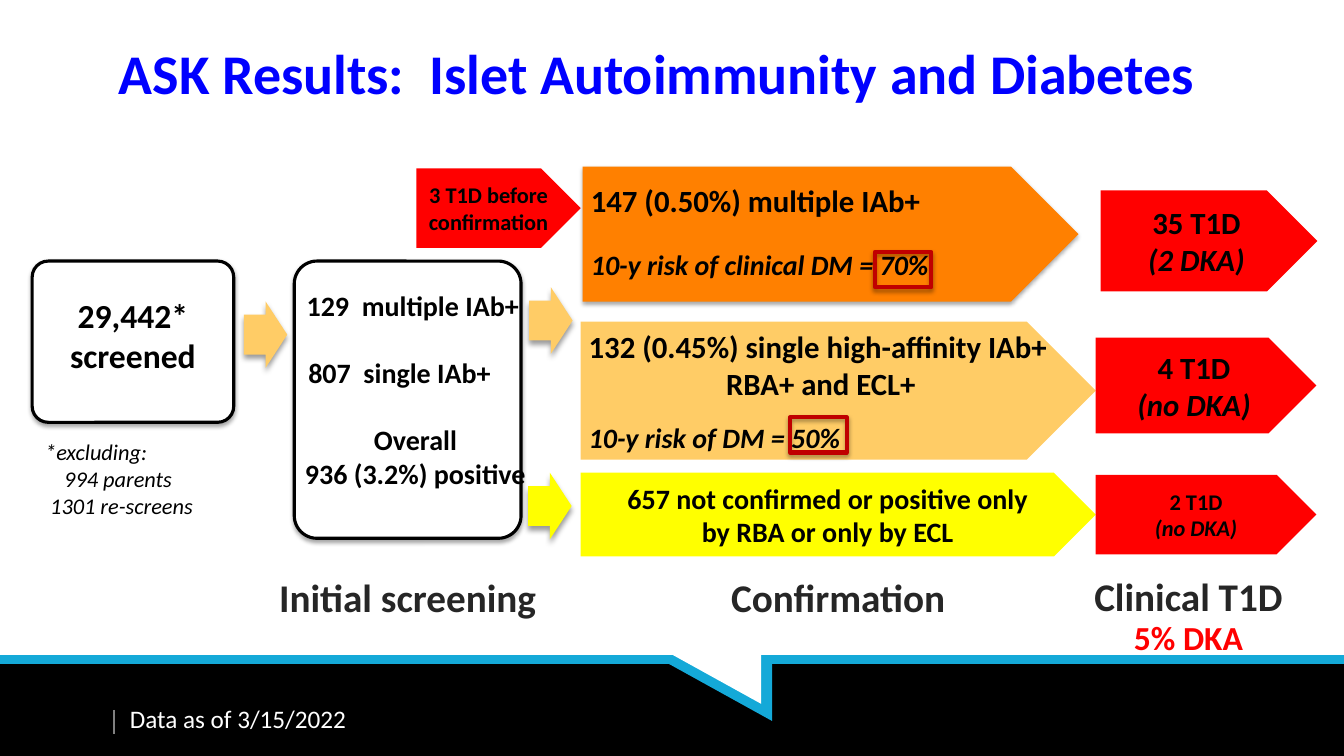
from dataclasses import dataclass
from lxml.etree import SubElement
from pptx import Presentation
from pptx.dml.color import RGBColor
from pptx.enum.shapes import MSO_CONNECTOR as Connector, MSO_SHAPE as Preset
from pptx.enum.text import MSO_ANCHOR as Anchor, PP_ALIGN as Align
from pptx.oxml.ns import qn
from pptx.util import Pt


@dataclass(frozen=True)
class Theme:
    font: str = "Calibri"
    blue: str = "0000FF"
    black: str = "000000"
    white: str = "FFFFFF"
    label: str = "262626"
    red: str = "FF0000"
    mark: str = "C00000"
    orange: str = "FF8000"
    sand: str = "FFCC66"
    yellow: str = "FFFF00"
    cyan: str = "14A9D8"
    gray: str = "808080"
    title_size: int = 40
    label_size: int = 28
    count_size: int = 24
    lead_size: int = 22
    body_size: int = 20
    date_size: int = 18
    small_size: int = 16


THEME = Theme()
SOFT = (35, 3.1, 1.8)
ARROW_SHADOW = (40, 4, 3)
TICK_SHADOW = (38, 3.1, 1.6)


@dataclass(frozen=True)
class Box:
    x: float
    y: float
    width: float
    height: float

    def inside(self, dx, dy, width, height):
        return Box(self.x + dx, self.y + dy, width, height)

    def lengths(self):
        return Pt(self.x), Pt(self.y), Pt(self.width), Pt(self.height)


@dataclass(frozen=True)
class Line:
    text: str
    size: int = THEME.body_size
    color: str = THEME.black
    bold: bool = True
    italic: bool = False
    align: Align = Align.CENTER
    before: float = 0
    indent: float = 0
    spacing: float = 1


def set_shadow(item, shadow=None):
    effects = SubElement(item._element.spPr, qn("a:effectLst"))
    if shadow:
        alpha, blur, distance = shadow
        outer = SubElement(effects, qn("a:outerShdw"), blurRad=str(Pt(blur)),
                           dist=str(Pt(distance)), dir="5400000", rotWithShape="0")
        color = SubElement(outer, qn("a:srgbClr"), val=THEME.black)
        SubElement(color, qn("a:alpha"), val=str(alpha * 1000))


def write(shape, lines, anchor=Anchor.TOP, inset=None, lift=0):
    frame = shape.text_frame
    frame.word_wrap = True
    frame.vertical_anchor = anchor
    if inset is not None:
        frame.margin_left = frame.margin_right = frame.margin_top = Pt(inset)
        frame.margin_bottom = Pt(inset + lift)
    for index, line in enumerate(lines):
        para = frame.add_paragraph() if index else frame.paragraphs[0]
        para.text = line.text
        para.alignment = line.align
        para.line_spacing = line.spacing
        if line.before:
            para.space_before = Pt(line.before)
        if line.indent:
            properties = para._p.get_or_add_pPr()
            properties.set("marL", str(Pt(line.indent)))
            properties.set("indent", "0")
        font = para.font
        font.name, font.size = THEME.font, Pt(line.size)
        font.bold, font.italic = line.bold, line.italic
        font.color.rgb = RGBColor.from_string(line.color)


def add_text(page, box, lines, anchor=Anchor.TOP):
    write(page.shapes.add_textbox(*box.lengths()), lines, anchor)


def add_preset(page, box, preset, fill=None, outline=None, weight=0, shadow=None):
    shape = page.shapes.add_shape(preset, *box.lengths())
    if fill:
        shape.fill.solid()
        shape.fill.fore_color.rgb = RGBColor.from_string(fill)
    else:
        shape.fill.background()
    if outline:
        shape.line.color.rgb = RGBColor.from_string(outline)
        shape.line.width = Pt(weight)
    else:
        shape.line.fill.background()
    if shadow:
        set_shadow(shape, shadow)
    else:
        shape.shadow.inherit = False
    return shape


def add_plate(page, box, fill, lines, shadow=None):
    plate = add_preset(page, box, Preset.PENTAGON, fill, shadow=shadow)
    write(plate, lines, Anchor.MIDDLE, 5.8)


def add_panel(page, box):
    panel = add_preset(page, box, Preset.ROUNDED_RECTANGLE, THEME.white, THEME.black, 2.25, SOFT)
    panel.adjustments[0] = 0.1
    return panel


def add_flow_arrow(page, box, fill):
    arrow = add_preset(page, box, Preset.RIGHT_ARROW, fill, shadow=ARROW_SHADOW)
    arrow.adjustments[0], arrow.adjustments[1] = 0.6, 0.5


def add_rule(page, start, end, color, weight, shadow=None):
    rule = page.shapes.add_connector(Connector.STRAIGHT, *map(Pt, start + end))
    rule.line.color.rgb = RGBColor.from_string(color)
    rule.line.width = Pt(weight)
    set_shadow(rule, shadow)


def column_label(text):
    return Line(text, THEME.label_size, THEME.label, spacing=0.6)


def draw_footer(page, box):
    add_preset(page, box, Preset.RECTANGLE, THEME.black)
    add_rule(page, (box.x, box.y), (box.x + box.width, box.y), THEME.cyan, 6)
    for dx, dy, color in ((475.9, 2.2, THEME.cyan), (468, -10.1, THEME.white)):
        notch = add_preset(page, box.inside(dx, dy, 75.6, 41.8), Preset.RIGHT_TRIANGLE, color)
        notch.rotation = 180
    tick = box.x + 81.4
    add_rule(page, (tick, box.y + 36), (tick, box.y + 53.3), THEME.gray, 1, TICK_SHADOW)
    add_text(page, box.inside(85.7, 28, 278.6, 28.8),
             [Line("Data as of 3/15/2022", THEME.date_size, THEME.white, False, align=Align.LEFT)])


def draw_title(page, box):
    add_text(page, box, [Line("ASK Results:  Islet Autoimmunity and Diabetes", THEME.title_size,
                              THEME.blue, align=Align.LEFT)], Anchor.MIDDLE)


def draw_screening(page, box):
    for dx, dy, fill in ((151.2, 96.3, THEME.sand), (355, 86.2, THEME.sand),
                         (354.3, 218.7, THEME.yellow)):
        add_flow_arrow(page, box.inside(dx, dy, 31, 47.5), fill)
    screened = add_panel(page, box.inside(0, 67.5, 144, 115.2))
    write(screened, [Line("29,442*", THEME.count_size), Line("screened", THEME.count_size)],
          Anchor.MIDDLE, 3.6, 9)
    add_panel(page, box.inside(187.2, 67.5, 162, 198))
    add_text(page, box.inside(184.4, 83.3, 178.6, 177.1), [
        Line("129  multiple IAb+", align=Align.LEFT, indent=4.5),
        Line("807  single IAb+", align=Align.LEFT, indent=5.7, before=24),
        Line("Overall", before=24),
        Line("936 (3.2%) positive"),
    ])
    add_plate(page, box.inside(274.4, 1.2, 117.4, 56.9), THEME.red,
              [Line("3 T1D before confirmation", THEME.small_size)])
    exclusions = (("*excluding:", 0), ("994 parents", 13.6), ("1301 re-screens", 3.6))
    add_text(page, box.inside(2.2, 190.6, 136, 65.5), [
        Line(text, THEME.small_size, bold=False, italic=True, align=Align.LEFT, indent=indent)
        for text, indent in exclusions])
    add_text(page, box.inside(143.3, 298.6, 249.8, 30.2), [column_label("Initial screening")])


def draw_confirmation(page, box):
    add_plate(page, box.inside(0, 110.7, 368, 98.6), THEME.sand, [
        Line("132 (0.45%) single high-affinity IAb+", THEME.lead_size, align=Align.LEFT),
        Line("RBA+ and ECL+", THEME.lead_size),
        Line("10-y risk of DM = 50%", italic=True, align=Align.LEFT, before=13.4),
    ])
    add_plate(page, box.inside(1.5, 0, 354.2, 96.5), THEME.orange, [
        Line("147 (0.50%) multiple IAb+", THEME.lead_size, align=Align.LEFT, spacing=0.9),
        Line("10-y risk of clinical DM = 70%", italic=True, align=Align.LEFT, before=23,
             spacing=0.9),
    ], SOFT)
    add_plate(page, box.inside(0, 218.7, 368, 59.8), THEME.yellow,
              [Line("657 not confirmed or positive only"), Line("by RBA or only by ECL")])
    for dx, dy in ((210.3, 61), (149.8, 179.1)):
        add_preset(page, box.inside(dx, dy, 40.3, 25.2), Preset.RECTANGLE,
                   outline=THEME.mark, weight=3, shadow=SOFT)
    add_text(page, box.inside(28.8, 298.6, 310.3, 30.2), [column_label("Confirmation")])


def draw_outcomes(page, box):
    outcomes = (
        ("35 T1D", "(2 DKA)", THEME.lead_size, (3.6, 17.1, 154.8, 72)),
        ("4 T1D", "(no DKA)", THEME.lead_size, (0, 122.2, 157.7, 68.4)),
        ("2 T1D", "(no DKA)", THEME.small_size, (0, 220.1, 157.7, 56.9)),
    )
    for count, acidosis, size, place in outcomes:
        add_plate(page, box.inside(*place), THEME.red,
                  [Line(count, size), Line(acidosis, size, italic=True)])
    add_text(page, box.inside(-19.4, 297.9, 171.4, 56.9), [
        column_label("Clinical T1D"),
        Line("5% DKA", THEME.count_size, THEME.red, before=10, spacing=0.6),
    ])


def main():
    deck = Presentation()
    deck.slide_width, deck.slide_height = Pt(960), Pt(540)
    page = deck.slides.add_slide(deck.slide_layouts[6])
    draw_footer(page, Box(0, 471, 960, 69))
    draw_title(page, Box(77.8, 31.7, 880, 39.6))
    draw_screening(page, Box(23, 119, 392, 355))
    draw_confirmation(page, Box(414.7, 119, 368, 355))
    draw_outcomes(page, Box(782.6, 119, 158.4, 355))
    deck.save("out.pptx")


if __name__ == "__main__":
    main()
